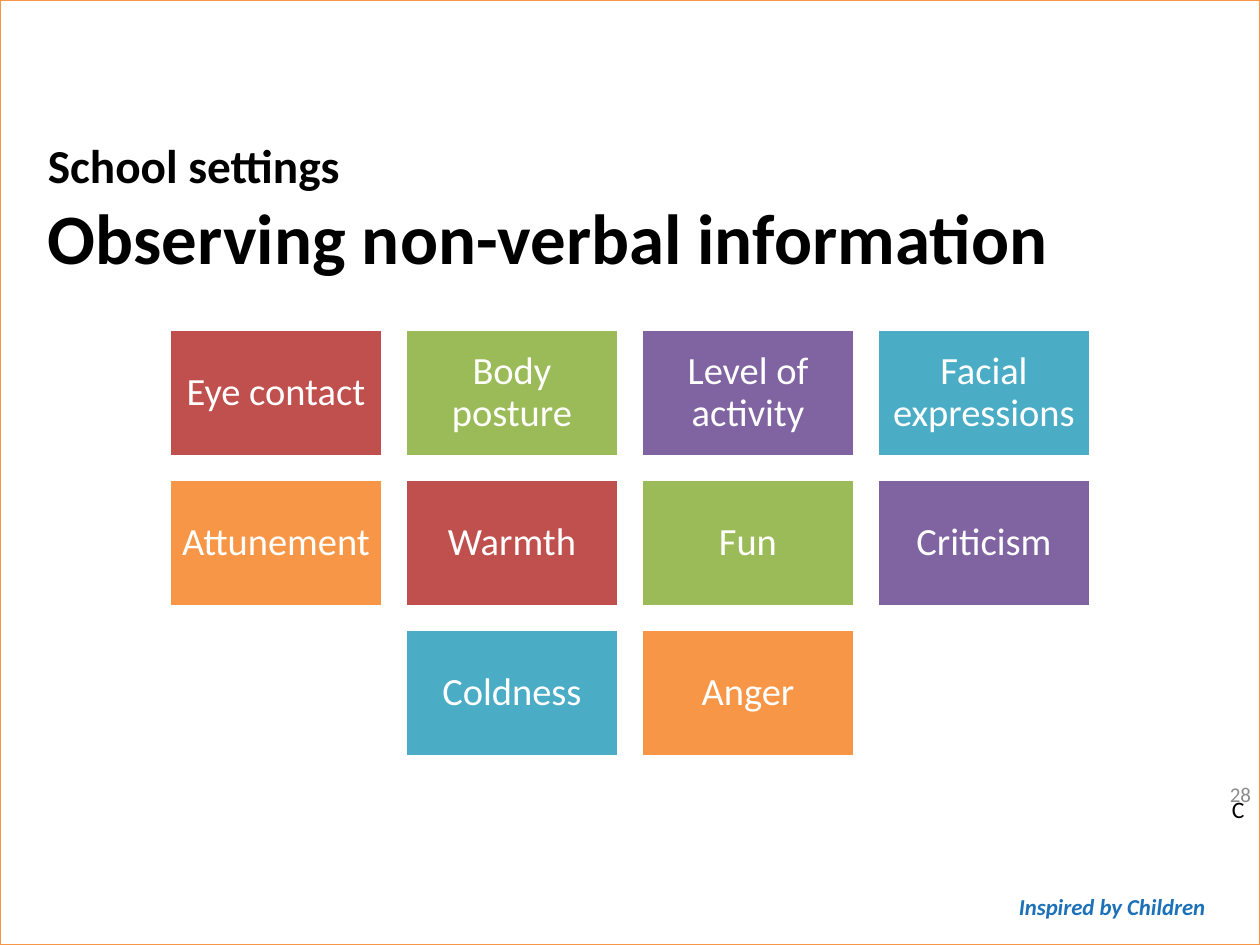
from pptx import Presentation
from pptx import util as u
from pptx.dml.color import RGBColor
from pptx.enum import shapes, text

PX = 914400 / 126
COLORS = {
    "white": "FFFFFF", "black": "000000", "gray": "8C8C8C", "blue": "1D71B8",
    "red": "C0504D", "green": "9BBB59", "purple": "8064A2",
    "teal": "4BACC6", "orange": "F79646",
}
ALIGN = text.PP_ALIGN
ANCHOR = text.MSO_ANCHOR


def px(*values):
    return [u.Emu(round(v * PX)) for v in values]


def write(sp, lines, color, align=ALIGN.LEFT, anchor=ANCHOR.TOP,
          inset=(13, 6), bold=None, italic=None):
    """Fill a shape with (text, size) lines in one paragraph."""
    tf = sp.text_frame
    tf.word_wrap = True
    tf.vertical_anchor = anchor
    tf.margin_left, tf.margin_top = px(*inset)
    tf.margin_right, tf.margin_bottom = px(*inset)
    p = tf.paragraphs[0]
    p.alignment = align
    for i, (line, size) in enumerate(lines):
        if i:
            p.add_line_break()
        r = p.add_run()
        r.text = line
        r.font.name = "Calibri"
        r.font.size = u.Pt(size)
        r.font.bold = bold
        r.font.italic = italic
        r.font.color.rgb = RGBColor.from_string(COLORS[color])
    return p


prs = Presentation()
prs.slide_width, prs.slide_height = px(1260, 945)
s = prs.slides.add_slide(prs.slide_layouts[6])

# Page frame, then the tiles: (fill, label) row by row
boxes = [(0, 0, 1260, 945, "white", "orange", 0.75, None)]
rows = [
    [("red", "Eye contact"), ("green", "Body posture"),
     ("purple", "Level of activity"), ("teal", "Facial expressions")],
    [("orange", "Attunement"), ("red", "Warmth"),
     ("green", "Fun"), ("purple", "Criticism")],
    [("teal", "Coldness"), ("orange", "Anger")],
]
TILE_W, TILE_H, STEP_X, STEP_Y, TOP = 214, 128, 236, 150, 329
for i, row in enumerate(rows):
    left = (1260 - TILE_W - STEP_X * (len(row) - 1)) // 2  # centred row
    for j, (fill, label) in enumerate(row):
        boxes.append((left + j * STEP_X, TOP + i * STEP_Y, TILE_W, TILE_H,
                      fill, "white", 2, label))

for x, y, w, h, fill, line, width, label in boxes:
    sp = s.shapes.add_shape(shapes.MSO_SHAPE.RECTANGLE, *px(x, y, w, h))
    sp.shadow.inherit = False
    sp.fill.solid()
    sp.fill.fore_color.rgb = RGBColor.from_string(COLORS[fill])
    sp.line.color.rgb = RGBColor.from_string(COLORS[line])
    sp.line.width = u.Pt(width)
    if label:
        p = write(sp, [(label, 22)], "white", ALIGN.CENTER, ANCHOR.MIDDLE, (11, 11))
        p.line_spacing = 0.9

# Title
sp = s.shapes.add_textbox(*px(39, 129, 1134, 157))
write(sp, [("School settings", 27), ("Observing non-verbal information", 40.5)],
      "black", anchor=ANCHOR.MIDDLE, inset=(9, 5), bold=True)

# Tagline
sp = s.shapes.add_textbox(*px(987, 887, 231, 40))
write(sp, [("Inspired by Children", 13)], "blue", ALIGN.RIGHT, bold=True, italic=True)

# Slide number and side letter
sp = s.shapes.add_textbox(*px(976, 775, 284, 38))
write(sp, [("28", 12)], "gray", ALIGN.RIGHT, ANCHOR.MIDDLE, (9, 5))
sp = s.shapes.add_textbox(*px(1219, 789, 41, 41))
write(sp, [("C", 13.5)], "black")

prs.save("out.pptx")
